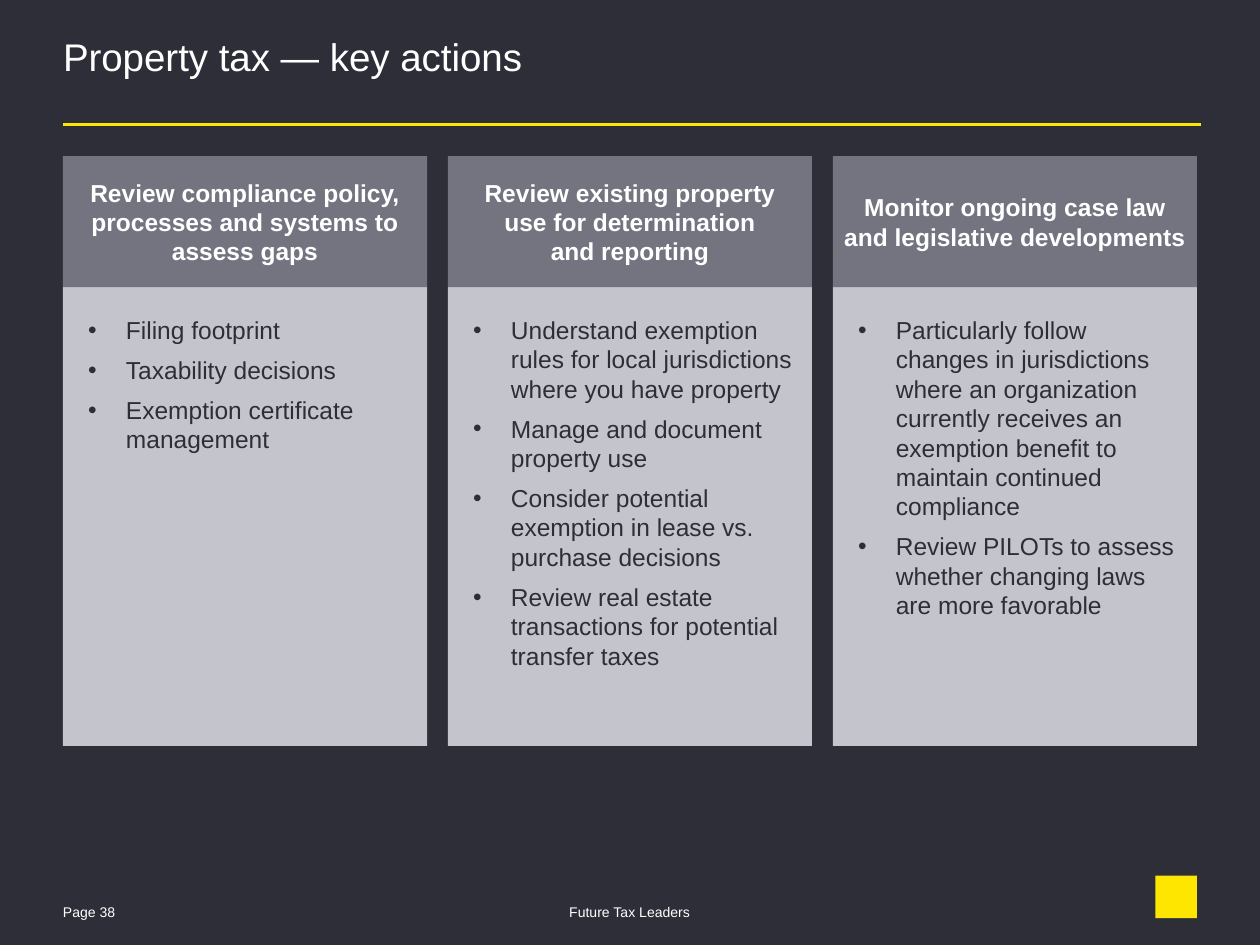
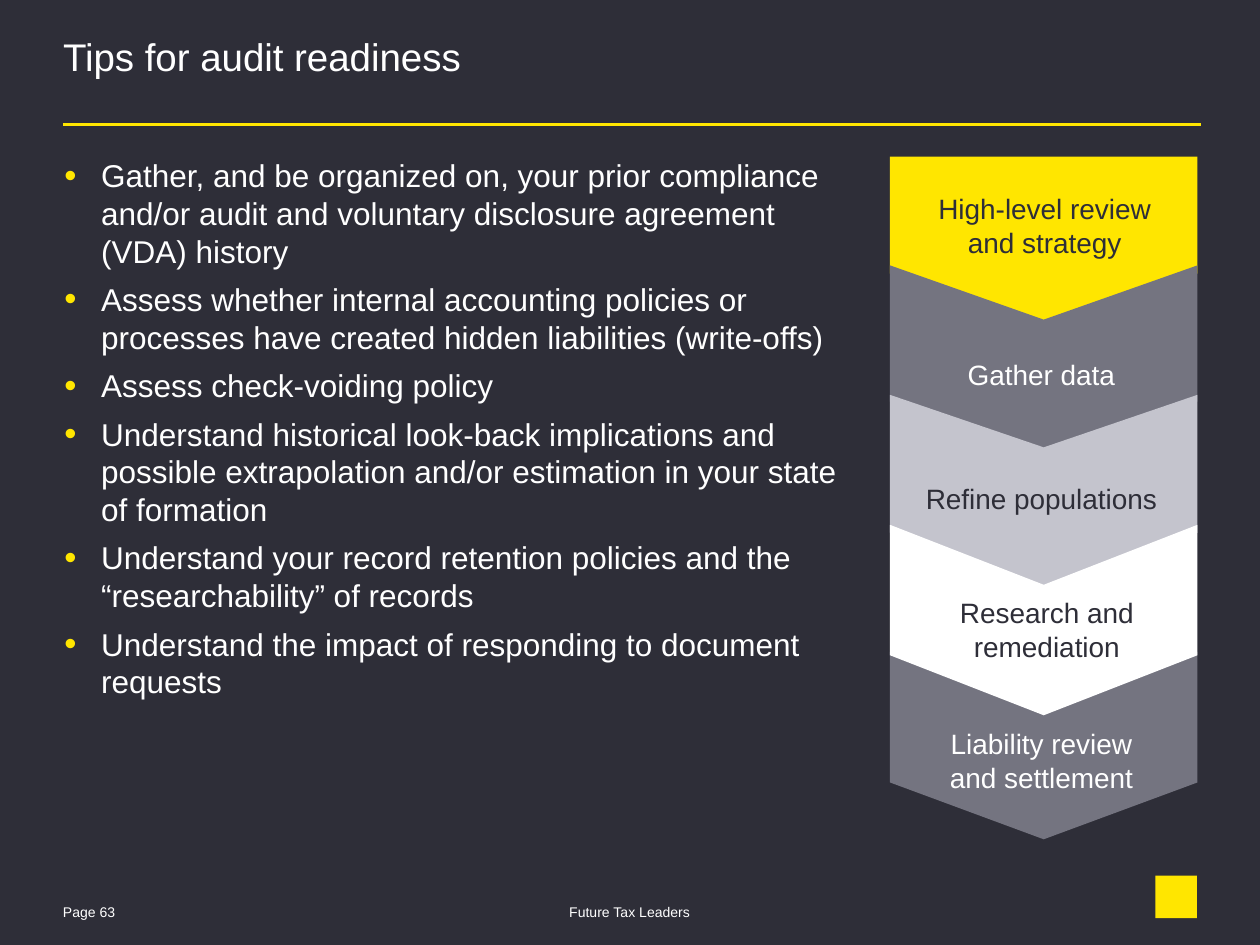
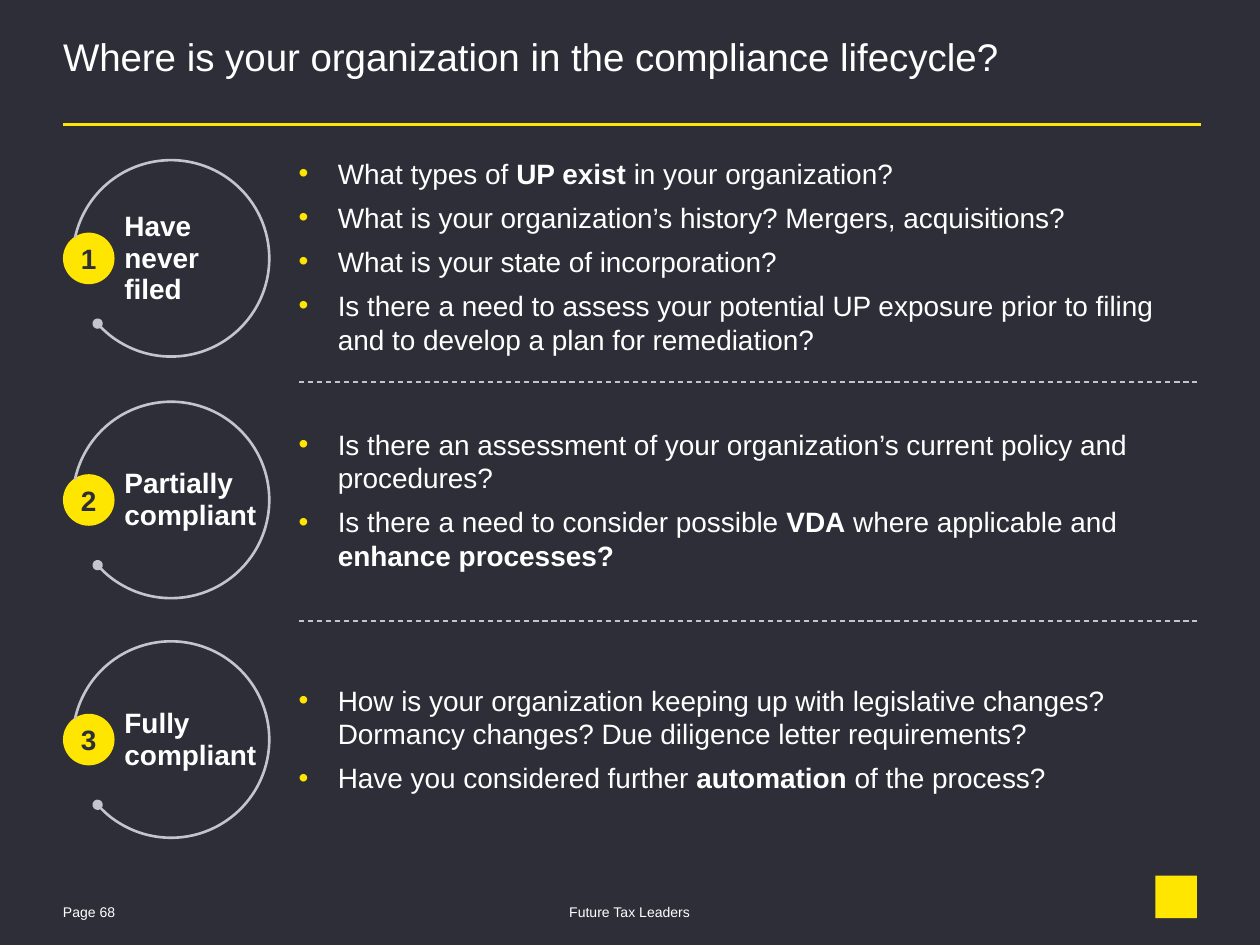
"""Build three tax briefing slides with a shared title, rule and footer."""
from dataclasses import dataclass
from typing import NamedTuple

from lxml import etree
from pptx import Presentation
from pptx import util as u
from pptx.dml.color import RGBColor
from pptx.enum import dml, shapes, text
from pptx.oxml.ns import qn

COLORS = {
    "ink": "2E2E38",
    "white": "FFFFFF",
    "yellow": "FFE600",
    "grey": "747480",
    "silver": "C4C4CD",
}
FONT = "Arial"
LEFT, RIGHT, CONTENT_TOP = 1.27, 24.13, 3.15
COLUMN_WIDTH, COLUMN_GAP, HEADER_HEIGHT, BODY_HEIGHT = 7.34, 0.42, 2.64, 9.25
CHEVRON_CENTER, CHEVRON_SPAN = 21.04, 6.2
QUESTION_LEFT = 6.02


class Box(NamedTuple):
    """Left, top, width and height in centimetres."""
    left: float
    top: float
    width: float
    height: float

    def lengths(self) -> list[u.Cm]:
        return [u.Cm(value) for value in self]


class Span(NamedTuple):
    """A stretch of text in one weight."""
    words: str
    bold: bool = False


@dataclass
class Style:
    """How the text of a box looks."""
    size: float
    color: str = "white"
    align: text.PP_ALIGN = text.PP_ALIGN.LEFT
    anchor: text.MSO_ANCHOR = text.MSO_ANCHOR.TOP
    insets: tuple[float, float, float, float] = (0, 0, 0, 0)
    line_spacing: float | None = None
    space_after: float = 0
    indent: float = 0
    bullet: str = ""
    bullet_percent: int = 100
    wrap: bool = True


@dataclass
class Column:
    """A headed list of actions."""
    header: str
    actions: list[str]


@dataclass
class Step:
    """A downward chevron and its label."""
    label: str
    label_box: Box
    top: float
    length: float
    point: float
    fill: str
    color: str
    kind: shapes.MSO_SHAPE = shapes.MSO_SHAPE.CHEVRON


@dataclass
class Stage:
    """A numbered ring with its questions."""
    label: str
    ring_top: float
    questions_top: float
    questions_height: float
    questions: list[list[Span]]


CENTER, MIDDLE = text.PP_ALIGN.CENTER, text.MSO_ANCHOR.MIDDLE
TITLE = Style(22, line_spacing=0.85)
FOOTER = Style(8, insets=(0, 0.1, 0, 0))
FOOTER_CENTER = Style(8, align=CENTER, insets=(0, 0.1, 0, 0))
HEADER = Style(14, align=CENTER, anchor=MIDDLE, insets=(0.15,) * 4)
ACTION = Style(14, "ink", insets=(0.51, 0.56, 0.25, 0.15), space_after=6,
               indent=0.76, bullet="ink")
TIP = Style(18, space_after=6, indent=0.74, bullet="yellow", bullet_percent=110)
QUESTION = Style(16, space_after=6, indent=0.79, bullet="yellow")
STAGE_LABEL = Style(16, anchor=MIDDLE, line_spacing=0.95)
BADGE = Style(16, "ink", CENTER, MIDDLE, wrap=False)

COLUMNS = [
    Column("Review compliance policy, processes and systems to assess gaps", [
        "Filing footprint",
        "Taxability decisions",
        "Exemption certificate management",
    ]),
    Column("Review existing property\nuse for determination\nand reporting", [
        "Understand exemption rules for local jurisdictions where you have property",
        "Manage and document property use",
        "Consider potential exemption in lease vs. purchase decisions",
        "Review real estate transactions for potential transfer taxes",
    ]),
    Column("Monitor ongoing case law and legislative developments", [
        "Particularly follow changes in jurisdictions where an organization currently "
        "receives an exemption benefit to maintain continued compliance",
        "Review PILOTs to assess whether changing laws are more favorable",
    ]),
]

TIPS = [
    "Gather, and be organized on, your prior compliance and/or audit and voluntary "
    "disclosure agreement (VDA) history",
    "Assess whether internal accounting policies or processes have created hidden "
    "liabilities (write-offs)",
    "Assess check-voiding policy",
    "Understand historical look-back implications and possible extrapolation and/or "
    "estimation in your state of formation",
    "Understand your record retention policies and the “researchability” of records",
    "Understand the impact of responding to document requests",
]

STEPS = [
    Step("Liability review and settlement", Box(18.77, 14.53, 4.45, 1.52),
         13.14, 3.78, 0.303, "grey", "white"),
    Step("High-level review and strategy", Box(18.47, 3.78, 5.18, 1.45),
         3.16, 3.38, 0.303, "yellow", "ink", shapes.MSO_SHAPE.PENTAGON),
    Step("Gather data", Box(18.77, 7.11, 4.45, 0.81),
         5.35, 3.84, 0.285, "grey", "white"),
    Step("Refine populations", Box(17.91, 9.63, 6.17, 0.76),
         7.96, 3.84, 0.276, "silver", "ink"),
    Step("Research and remediation", Box(18.54, 11.89, 5.13, 1.52),
         10.58, 3.84, 0.315, "white", "ink"),
]

STAGES = [
    Stage("Have never\nfiled", 3.23, 3.15, 4.09, [
        [Span("What types of "), Span("UP exist ", True), Span("in your organization?")],
        [Span("What is your organization’s history? Mergers, acquisitions?")],
        [Span("What is your state of incorporation?")],
        [Span("Is there a need to assess your potential UP exposure prior to filing "
              "and to develop a plan for remediation?")],
    ]),
    Stage("Partially compliant", 8.1, 8.61, 3.25, [
        [Span("Is there an assessment of your organization’s current policy and "
              "procedures?")],
        [Span("Is there a need to consider possible "), Span("VDA", True),
         Span(" where applicable and "), Span("enhance processes?", True)],
    ]),
    Stage("Fully\ncompliant", 12.93, 13.77, 2.29, [
        [Span("How is your organization keeping up with legislative changes? "
              "Dormancy changes? Due diligence letter requirements?")],
        [Span("Have you considered further "), Span("automation", True),
         Span(" of the process?")],
    ]),
]
DIVIDERS = [7.7, 12.52]


def rgb(name: str) -> RGBColor:
    """Look up a named colour."""
    return RGBColor.from_string(COLORS[name])


def plain(lines: list[str], bold: bool = False) -> list[list[Span]]:
    """Turn lines into paragraphs of one span each."""
    return [[Span(line, bold)] for line in lines]


def add_bullet(para, style: Style) -> None:
    """Give a paragraph a hanging bullet."""
    props = para._p.get_or_add_pPr()
    indent = u.Cm(style.indent)
    props.set("marL", str(indent))
    props.set("indent", str(-indent))
    color = etree.SubElement(props, qn("a:buClr"))
    etree.SubElement(color, qn("a:srgbClr"), val=COLORS[style.bullet])
    etree.SubElement(props, qn("a:buSzPct"), val=str(style.bullet_percent * 1000))
    etree.SubElement(props, qn("a:buFont"), typeface=FONT)
    etree.SubElement(props, qn("a:buChar"), char="•")


def write(shape, paragraphs: list[list[Span]], style: Style) -> None:
    """Fill a shape with styled paragraphs."""
    frame = shape.text_frame
    frame.auto_size = text.MSO_AUTO_SIZE.NONE
    frame.word_wrap = style.wrap
    frame.vertical_anchor = style.anchor
    (frame.margin_left, frame.margin_top,
     frame.margin_right, frame.margin_bottom) = map(u.Cm, style.insets)
    for index, spans in enumerate(paragraphs):
        para = frame.add_paragraph() if index else frame.paragraphs[0]
        if style.bullet:
            add_bullet(para, style)
        para.alignment = style.align
        para.space_before = u.Pt(0)
        para.space_after = u.Pt(style.space_after)
        if style.line_spacing:
            para.line_spacing = style.line_spacing
        for span in spans:
            for row, words in enumerate(span.words.split("\n")):
                if row:
                    para.add_line_break()
                run = para.add_run()
                run.text = words
                run.font.name = FONT
                run.font.size = u.Pt(style.size)
                run.font.bold = span.bold
                run.font.color.rgb = rgb(style.color)


def add_text(page, box: Box, paragraphs: list[list[Span]], style: Style) -> None:
    """Add a text box."""
    write(page.shapes.add_textbox(*box.lengths()), paragraphs, style)


def add_block(page, kind: shapes.MSO_SHAPE, box: Box, fill: str):
    """Add a filled shape without outline or shadow."""
    shape = page.shapes.add_shape(kind, *box.lengths())
    shape.shadow.inherit = False
    shape.fill.solid()
    shape.fill.fore_color.rgb = rgb(fill)
    shape.line.fill.background()
    return shape


def add_rule(page, left: float, right: float, top: float, color: str, width: float):
    """Add a horizontal line."""
    rule = page.shapes.add_connector(
        shapes.MSO_CONNECTOR.STRAIGHT, u.Cm(left), u.Cm(top), u.Cm(right), u.Cm(top))
    rule.line.color.rgb = rgb(color)
    rule.line.width = u.Pt(width)
    etree.SubElement(rule._element.spPr, qn("a:effectLst"))
    return rule


def add_page(deck, title: str, number: int):
    """Add a slide with title, rule, footer and corner mark."""
    page = deck.slides.add_slide(deck.slide_layouts[5])
    heading = page.shapes.title
    heading.left, heading.top, heading.width, heading.height = Box(
        LEFT, 0.81, 22.86, 1.65).lengths()
    write(heading, plain([title]), TITLE)
    add_rule(page, LEFT, 24.21, 2.51, "yellow", 1.5)
    add_text(page, Box(LEFT, 18.11, 1.85, 0.51), plain([f"Page {number}"]), FOOTER)
    add_text(page, Box(7.82, 18.11, 9.75, 0.51), plain(["Future Tax Leaders"]),
             FOOTER_CENTER)
    add_block(page, shapes.MSO_SHAPE.RECTANGLE, Box(23.29, 17.65, 0.84, 0.86), "yellow")
    return page


def add_column(page, index: int, column: Column) -> None:
    """Draw a header block over a list block."""
    left = LEFT + index * (COLUMN_WIDTH + COLUMN_GAP)
    body = add_block(
        page, shapes.MSO_SHAPE.RECTANGLE,
        Box(left, CONTENT_TOP + HEADER_HEIGHT, COLUMN_WIDTH, BODY_HEIGHT), "silver")
    write(body, plain(column.actions), ACTION)
    header = add_block(page, shapes.MSO_SHAPE.RECTANGLE,
                       Box(left, CONTENT_TOP, COLUMN_WIDTH, HEADER_HEIGHT), "grey")
    write(header, plain([column.header], bold=True), HEADER)


def add_chevron(page, step: Step) -> None:
    """Draw a chevron turned to point down."""
    box = Box(CHEVRON_CENTER - step.length / 2,
              step.top + (step.length - CHEVRON_SPAN) / 2, step.length, CHEVRON_SPAN)
    chevron = add_block(page, step.kind, box, step.fill)
    chevron.adjustments[0] = step.point
    chevron.rotation = 90


def add_stage(page, number: int, stage: Stage) -> None:
    """Draw a ring with its badge, label and questions."""
    top = stage.ring_top
    add_text(page, Box(QUESTION_LEFT, stage.questions_top, RIGHT - QUESTION_LEFT,
                       stage.questions_height), stage.questions, QUESTION)
    add_text(page, Box(2.51, top + 1.36, 2.79, 1.24),
             plain([stage.label], bold=True), STAGE_LABEL)
    badge = add_block(page, shapes.MSO_SHAPE.OVAL,
                      Box(LEFT, top + 1.46, 1.04, 1.04), "yellow")
    write(badge, plain([str(number)], bold=True), BADGE)
    ring = page.shapes.add_shape(shapes.MSO_SHAPE.ARC,
                                 *Box(1.47, top, 3.96, 3.96).lengths())
    ring.shadow.inherit = False
    ring.adjustments[0], ring.adjustments[1] = 115.154, 83.031
    ring.fill.background()
    ring.line.color.rgb = rgb("silver")
    ring.line.width = u.Pt(1.5)
    outline = ring._element.spPr.find(qn("a:ln"))
    etree.SubElement(outline, qn("a:tailEnd"), type="oval")


def build_actions(deck) -> None:
    """Build the property tax slide."""
    page = add_page(deck, "Property tax — key actions", 38)
    for index, column in enumerate(COLUMNS):
        add_column(page, index, column)


def build_tips(deck) -> None:
    """Build the audit readiness slide."""
    page = add_page(deck, "Tips for audit readiness", 63)
    add_text(page, Box(1.3, CONTENT_TOP, 15.75, 13.74), plain(TIPS), TIP)
    for step in STEPS:
        add_chevron(page, step)
    for step in STEPS:
        style = Style(16, step.color, CENTER, MIDDLE, (0, 0.08, 0, 0))
        add_text(page, step.label_box, plain([step.label]), style)


def build_lifecycle(deck) -> None:
    """Build the compliance lifecycle slide."""
    page = add_page(deck, "Where is your organization in the compliance lifecycle?", 68)
    for number, stage in enumerate(STAGES, start=1):
        add_stage(page, number, stage)
    for top in DIVIDERS:
        divider = add_rule(page, QUESTION_LEFT, RIGHT, top, "silver", 0.75)
        divider.line.dash_style = dml.MSO_LINE.DASH


def main() -> None:
    """Build and save the deck."""
    deck = Presentation()
    deck.slide_width, deck.slide_height = u.Cm(25.4), u.Cm(19.05)
    backdrop = deck.slide_master.background.fill
    backdrop.solid()
    backdrop.fore_color.rgb = rgb("ink")
    build_actions(deck)
    build_tips(deck)
    build_lifecycle(deck)
    deck.save("out.pptx")


if __name__ == "__main__":
    main()
